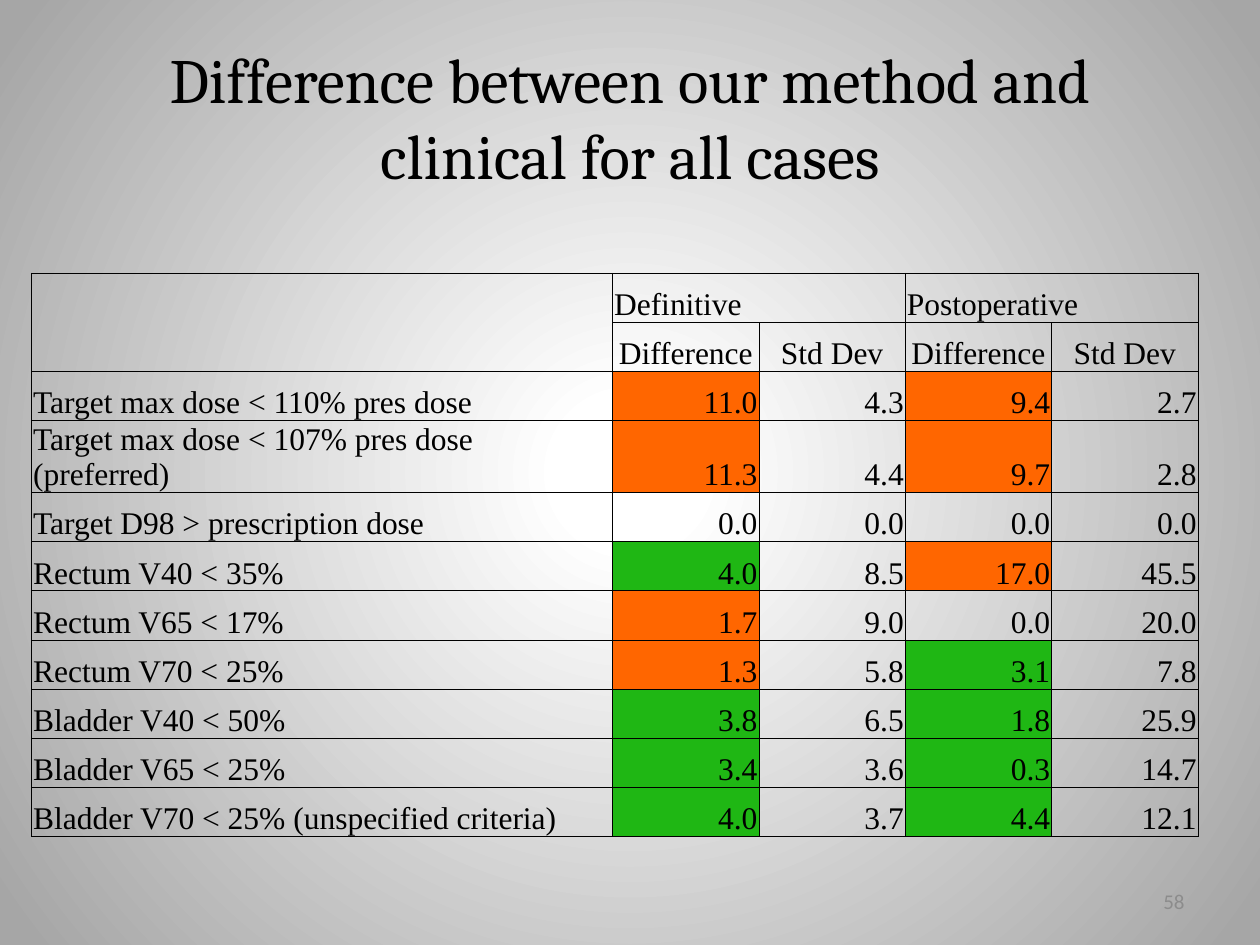
from lxml.etree import SubElement
from pptx import Presentation
from pptx.dml.color import RGBColor
from pptx.enum.text import MSO_ANCHOR as Anchor, MSO_AUTO_SIZE as AutoSize, PP_ALIGN as Align
from pptx.oxml import parse_xml
from pptx.oxml.ns import nsdecls, qn
from pptx.util import Cm, Pt

COLORS = {"text": "000000", "worse": "FF6600", "better": "1FB714",
          "number": "8C8C8C", "center": "FFFFFF", "edge": "A6A6A6"}
TITLE_FONT = {"name": "Cambria", "size": Pt(36)}
TABLE_FONT = {"name": "Times New Roman", "size": Pt(18)}
NUMBER_FONT = {"name": "Calibri", "size": Pt(12)}
CELL_FORMAT = {"vertical_anchor": Anchor.BOTTOM, "margin_left": Cm(0.03),
               "margin_right": Cm(0.03), "margin_top": Cm(0.03), "margin_bottom": 0}

COL_WIDTHS = [11.71] + [2.95] * 4
ROW_HEIGHT, WRAPPED_ROW, WRAPPED_HEIGHT = 0.99, 3, 1.45
HEADERS = [["", "Definitive", "", "Postoperative", ""],
           [""] + ["Difference", "Std Dev"] * 2]
MERGES = [((0, 0), (1, 0)), ((0, 1), (0, 2)), ((0, 3), (0, 4))]
RESULTS = [
    ("Target max dose < 110% pres dose", "11.0", "4.3", "9.4", "2.7", "worse", "worse"),
    ("Target max dose < 107% pres dose (preferred)", "11.3", "4.4", "9.7", "2.8", "worse", "worse"),
    ("Target D98 > prescription dose", "0.0", "0.0", "0.0", "0.0", None, None),
    ("Rectum V40 < 35%", "4.0", "8.5", "17.0", "45.5", "better", "worse"),
    ("Rectum V65 < 17%", "1.7", "9.0", "0.0", "20.0", "worse", None),
    ("Rectum V70 < 25%", "1.3", "5.8", "3.1", "7.8", "worse", "better"),
    ("Bladder V40 < 50%", "3.8", "6.5", "1.8", "25.9", "better", "better"),
    ("Bladder V65 < 25%", "3.4", "3.6", "0.3", "14.7", "better", "better"),
    ("Bladder V70 < 25% (unspecified criteria)", "4.0", "3.7", "4.4", "12.1", "better", "better"),
]


def set_attrs(obj, values):
    """Set each named attribute of an object."""
    for name, value in values.items():
        setattr(obj, name, value)


def write(tf, text, font, color, align):
    """Write one formatted paragraph into a text frame."""
    p = tf.paragraphs[0]
    p.alignment = align
    r = p.add_run()
    r.text = text
    set_attrs(r.font, font)
    r.font.color.rgb = RGBColor.from_string(COLORS[color])


def paint_background(s):
    """Fill the slide with a gradient that radiates from its centre."""
    fill = s.background.fill
    fill.gradient()
    for stop, position, color in zip(fill.gradient_stops, (0.09, 0.97), ("center", "edge")):
        stop.position = position
        stop.color.rgb = RGBColor.from_string(COLORS[color])
    grad = s.element.find(".//" + qn("a:gradFill"))
    grad.remove(grad.find(qn("a:lin")))
    circle = SubElement(grad, qn("a:path"), path="circle")
    SubElement(circle, qn("a:fillToRect"), dict.fromkeys("ltrb", "50000"))


def add_title(s, left, top, width, height):
    """Place and format the title placeholder."""
    sp = s.shapes.title
    set_attrs(sp, {"left": Cm(left), "top": Cm(top), "width": Cm(width), "height": Cm(height)})
    set_attrs(sp.text_frame, {"auto_size": AutoSize.NONE, "word_wrap": True,
                              "vertical_anchor": Anchor.MIDDLE})
    write(sp.text_frame, "Difference between our method and clinical for all cases",
          TITLE_FONT, "text", Align.CENTER)


def add_borders(cell):
    """Draw a thin line on all four sides of a cell."""
    tc_pr = cell._tc.get_or_add_tcPr()
    for i, side in enumerate("LRTB"):
        tc_pr.insert(i, parse_xml(
            f'<a:ln{side} {nsdecls("a")} w="6350"><a:solidFill>'
            f'<a:srgbClr val="{COLORS["text"]}"/></a:solidFill></a:ln{side}>'))


def format_cell(cell, text, align, color):
    """Write a cell and set its margins, fill and borders."""
    set_attrs(cell, CELL_FORMAT)
    if text:
        write(cell.text_frame, text, TABLE_FONT, "text", align)
    if color:
        cell.fill.solid()
        cell.fill.fore_color.rgb = RGBColor.from_string(COLORS[color])
    else:
        cell.fill.background()
    add_borders(cell)


def add_results_table(s, left, top):
    """Build the table of differences and standard deviations."""
    heights = [ROW_HEIGHT] * (len(HEADERS) + len(RESULTS))
    heights[WRAPPED_ROW] = WRAPPED_HEIGHT
    table = s.shapes.add_table(len(heights), len(COL_WIDTHS), Cm(left), Cm(top),
                               Cm(sum(COL_WIDTHS)), Cm(sum(heights))).table
    set_attrs(table, {"first_row": False, "horz_banding": False})
    for col, width in zip(table.columns, COL_WIDTHS):
        col.width = Cm(width)
    for row, height in zip(table.rows, heights):
        row.height = Cm(height)
    for i, texts in enumerate(HEADERS):
        for j, text in enumerate(texts):
            format_cell(table.cell(i, j), text, Align.CENTER if i else Align.LEFT, None)
    for i, (*texts, definitive, postoperative) in enumerate(RESULTS, len(HEADERS)):
        fills = (None, definitive, None, postoperative, None)
        for j, (text, color) in enumerate(zip(texts, fills)):
            format_cell(table.cell(i, j), text, Align.RIGHT if j else Align.LEFT, color)
    for first, last in MERGES:
        table.cell(*first).merge(table.cell(*last))


def add_slide_number(s, left, top, width, height):
    """Place the slide number at the bottom right."""
    tf = s.shapes.add_textbox(Cm(left), Cm(top), Cm(width), Cm(height)).text_frame
    set_attrs(tf, {"word_wrap": True, "vertical_anchor": Anchor.MIDDLE})
    write(tf, "58", NUMBER_FONT, "number", Align.RIGHT)


def main():
    """Build the slide and save it."""
    prs = Presentation()
    set_attrs(prs, {"slide_width": Cm(25.4), "slide_height": Cm(19.05)})
    s = prs.slides.add_slide(prs.slide_layouts[5])
    paint_background(s)
    add_title(s, 1.27, 0.76, 22.86, 3.18)
    add_results_table(s, 0.64, 5.51)
    add_slide_number(s, 18.2, 17.66, 5.93, 1.01)
    prs.save("out.pptx")


if __name__ == "__main__":
    main()
